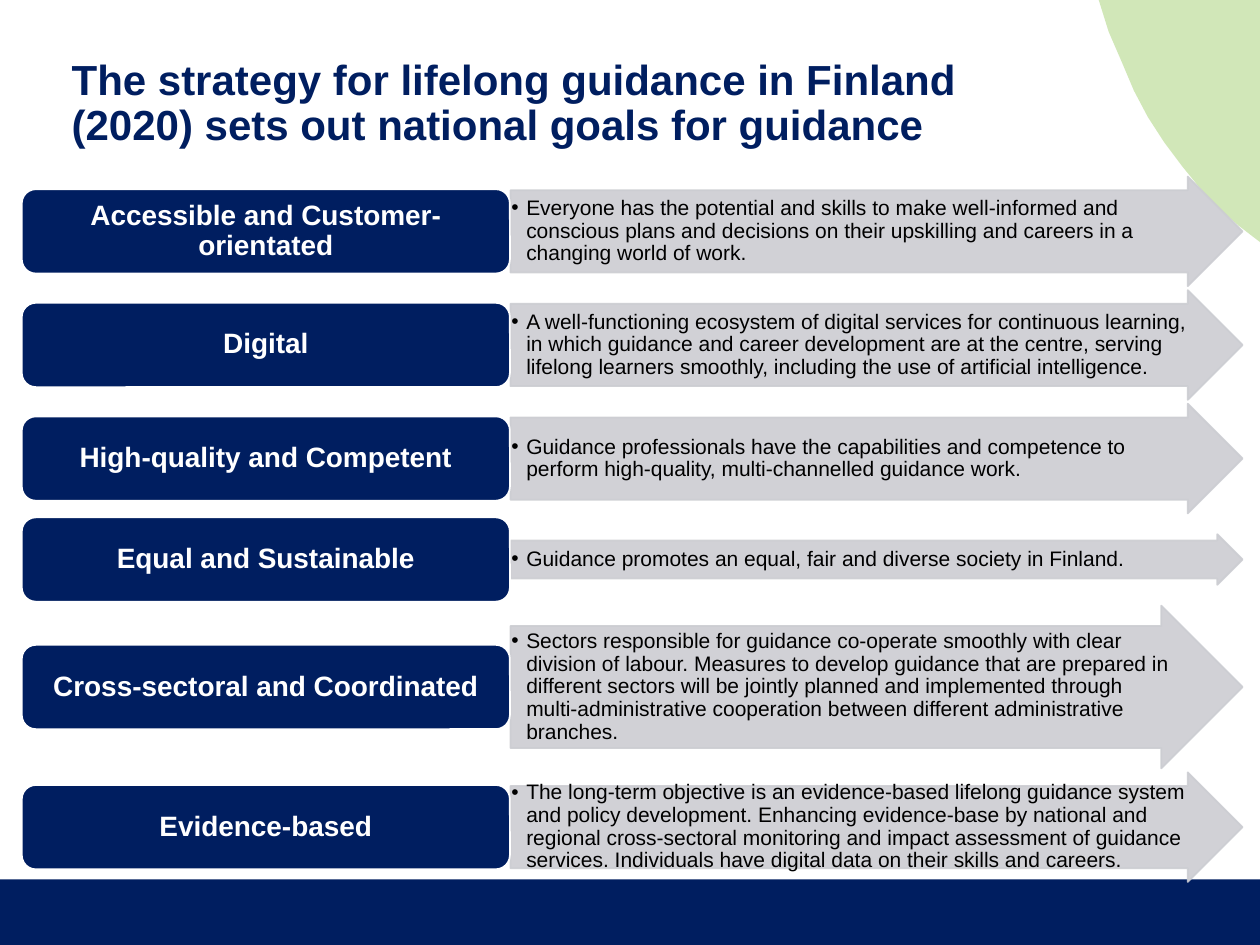
from lxml import etree
from pptx import Presentation
from pptx.dml.color import RGBColor
from pptx.enum.shapes import MSO_SHAPE
from pptx.enum.text import MSO_ANCHOR, MSO_AUTO_SIZE, PP_ALIGN
from pptx.oxml.ns import qn
from pptx.util import Cm, Pt

RECT = MSO_SHAPE.RECTANGLE
ROUND = MSO_SHAPE.ROUNDED_RECTANGLE
ARROW = MSO_SHAPE.RIGHT_ARROW
MIDDLE = MSO_ANCHOR.MIDDLE
LEFT = PP_ALIGN.LEFT
CENTER = PP_ALIGN.CENTER
FIXED = MSO_AUTO_SIZE.NONE

COLORS = {"navy": "001E60", "green": "D1E7B8", "grey": "CCCDD2",
          "white": "FFFFFF", "black": "000000"}
FONT = "Arial"
TOP, GAP = 3.56, 0.08
BOX_X, BOX_W, BOX_H = 0.44, 9.84, 1.7
ARROW_X, ARROW_W = 10.29, 14.76
SHORT, MID, TALL = 1.02, 2.21, 3.28

CURVE = [(22.35, 0.64), (22.61, 1.24), (22.86, 1.83), (23.14, 2.36),
         (23.47, 2.87), (23.83, 3.35), (24.18, 3.78), (24.56, 4.19),
         (24.97, 4.55), (25.4, 4.88), (25.4, 0)]

TITLE = ("The strategy for lifelong guidance in Finland \v"
         "(2020) sets out national goals for guidance")

GOALS = [
    ("Accessible and Customer-orientated", MID,
     "Everyone has the potential and skills to make well-informed and "
     "conscious plans and decisions on their upskilling and careers in a "
     "changing world of work."),
    ("Digital", MID,
     "A well-functioning ecosystem of digital services for continuous "
     "learning, in which guidance and career development are at the centre, "
     "serving lifelong learners smoothly, including the use of artificial "
     "intelligence."),
    ("High-quality and Competent", MID,
     "Guidance professionals have the capabilities and competence to perform "
     "high-quality, multi-channelled guidance work."),
    ("Equal and Sustainable", SHORT,
     "Guidance promotes an equal, fair and diverse society in Finland."),
    ("Cross-sectoral and Coordinated", TALL,
     "Sectors responsible for guidance co-operate smoothly with clear "
     "division of labour. Measures to develop guidance that are prepared in "
     "different sectors will be jointly planned and implemented through "
     "multi-administrative cooperation between different administrative "
     "branches."),
    ("Evidence-based", MID,
     "The long-term objective is an evidence-based lifelong guidance system "
     "and policy development. Enhancing evidence-base by national and "
     "regional cross-sectoral monitoring and impact assessment of guidance "
     "services. Individuals have digital data on their skills and careers."),
]


def color(name):
    return RGBColor.from_string(COLORS[name])


def paint(shape, fill, line=None):
    shape.shadow.inherit = False
    shape.fill.solid()
    shape.fill.fore_color.rgb = color(fill)
    if line:
        shape.line.color.rgb = color(line)
        shape.line.width = Pt(1)
    else:
        shape.line.fill.background()


def fade(shape, percent):
    props = shape._element.spPr
    for tint in list(props.iter(qn("a:srgbClr"))):
        etree.SubElement(tint, qn("a:alpha")).set("val", str(percent * 1000))


def add_bullet(para, indent):
    props = para._p.get_or_add_pPr()
    props.set("marL", str(indent))
    props.set("indent", str(-indent))
    etree.SubElement(props, qn("a:buFont")).set("typeface", FONT)
    etree.SubElement(props, qn("a:buChar")).set("char", "•")


def write(shape, text, size, ink, align, bold=False, pad=None, bullet=False):
    frame = shape.text_frame
    frame.text = text
    frame.word_wrap = True
    frame.auto_size = FIXED
    frame.vertical_anchor = MIDDLE
    if pad:
        frame.margin_left = frame.margin_right = Cm(pad[0])
        frame.margin_top = frame.margin_bottom = Cm(pad[1])
    para = frame.paragraphs[0]
    para.alignment = align
    para.line_spacing = 0.9
    if bullet:
        add_bullet(para, Cm(0.3))
    for run in para.runs:
        run.font.name = FONT
        run.font.size = Pt(size)
        run.font.bold = bold
        run.font.color.rgb = color(ink)


def add_shape(slide, kind, x, y, w, h):
    return slide.shapes.add_shape(kind, Cm(x), Cm(y), Cm(w), Cm(h))


def add_decor(slide):
    paint(add_shape(slide, RECT, 0, 17.73, 25.4, 1.32), "navy")
    pen = slide.shapes.build_freeform(Cm(22.15), 0)
    pen.add_line_segments([(Cm(x), Cm(y)) for x, y in CURVE], close=True)
    paint(pen.convert_to_shape(), "green")


def add_title(slide):
    title = slide.shapes.title
    title.left, title.top = Cm(1.19), Cm(0.3)
    title.width, title.height = Cm(20.9), Cm(3.61)
    write(title, TITLE, 24, "navy", LEFT, bold=True)


def add_goal(slide, mid, name, height, text):
    arrow = add_shape(slide, ARROW, ARROW_X, mid - height / 2, ARROW_W, height)
    arrow.adjustments[0] = 0.75
    arrow.adjustments[1] = 0.5
    paint(arrow, "grey", "grey")
    fade(arrow, 90)
    write(arrow, text, 12, "black", LEFT, pad=(0.02, 0.02), bullet=True)
    box = add_shape(slide, ROUND, BOX_X, mid - BOX_H / 2, BOX_W, BOX_H)
    paint(box, "navy", "white")
    write(box, name, 16, "white", CENTER, bold=True, pad=(0.18, 0.08))


def main():
    deck = Presentation()
    deck.slide_width, deck.slide_height = Cm(25.4), Cm(19.05)
    slide = deck.slides.add_slide(deck.slide_layouts[5])
    add_decor(slide)
    add_title(slide)
    top = TOP
    for name, height, text in GOALS:
        row = max(height, BOX_H)
        add_goal(slide, top + row / 2, name, height, text)
        top += row + GAP
    deck.save("out.pptx")


if __name__ == "__main__":
    main()
